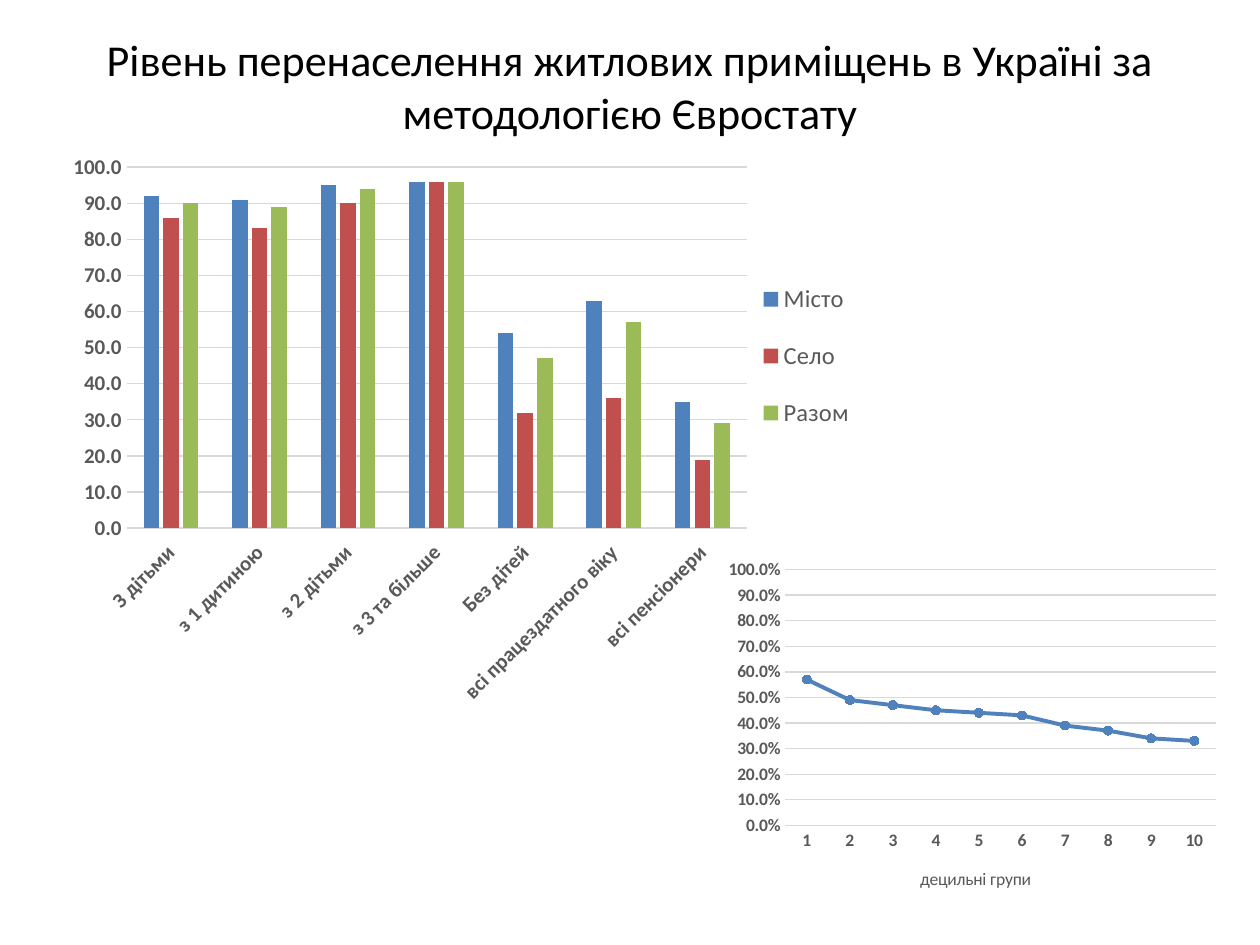
from dataclasses import dataclass
from lxml.etree import SubElement, QName
from pptx import Presentation
from pptx.chart.data import CategoryChartData as Data
from pptx.dml.color import RGBColor as Rgb
from pptx.enum.chart import (
    XL_CHART_TYPE as Kind,
    XL_LEGEND_POSITION as Side,
    XL_MARKER_STYLE as Mark,
    XL_TICK_LABEL_POSITION as Label,
    XL_TICK_MARK as Tick,
)
from pptx.enum.text import MSO_ANCHOR as Anchor, MSO_AUTO_SIZE as Fit, PP_ALIGN as Align
from pptx.util import Inches, Pt


@dataclass(frozen=True)
class Theme:
    face: str = "Calibri"
    ink: str = "000000"
    grey: str = "595959"
    rule: str = "D9D9D9"
    hues: tuple = ("4F81BD", "C0504D", "9BBB59")
    head: float = 25.2
    key: float = 14
    big: float = 12
    small: float = 10
    thin: float = 0.75
    thick: float = 2.25


class Deck:
    """Holds the theme and the current slide, and adds each kind of element."""

    def __init__(self, theme):
        self.theme = theme
        self.prs = Presentation()
        self.prs.slide_width, self.prs.slide_height = Inches(10), Inches(7.5)
        self.slide = self.prs.slides.add_slide(self.prs.slide_layouts[5])

    def box(self, x, y, w, h):
        wide, high = self.prs.slide_width, self.prs.slide_height
        return int(x * wide), int(y * high), int(w * wide), int(h * high)

    def font(self, font, size, color, bold=False):
        font.name, font.size, font.bold = self.theme.face, Pt(size), bold
        font.color.rgb = Rgb.from_string(color)

    def title(self, text, area):
        shape = self.slide.shapes.title
        shape.left, shape.top, shape.width, shape.height = self.box(*area)
        frame = shape.text_frame
        frame.text = text
        frame.word_wrap, frame.auto_size = True, Fit.NONE
        frame.vertical_anchor = Anchor.MIDDLE
        para = frame.paragraphs[0]
        para.alignment = Align.CENTER
        self.font(para.font, self.theme.head, self.theme.ink)

    def place(self, node, spot, after=None, inner=False):
        space = "{%s}" % QName(node).namespace
        for old in node.findall(space + "layout"):
            node.remove(old)
        outer = SubElement(node, space + "layout")
        node.insert(0 if after is None else node.index(node.find(space + after)) + 1, outer)
        frame = SubElement(outer, space + "manualLayout")
        if inner:
            SubElement(frame, space + "layoutTarget", val="inner")
        for name in ("xMode", "yMode"):
            SubElement(frame, space + name, val="edge")
        for name, share in zip("xywh", spot):
            SubElement(frame, space + name, val=str(share))

    def line(self, line, color, width):
        line.color.rgb, line.width = Rgb.from_string(color), Pt(width)

    def chart(self, kind, area, cats, rows, plot, size, top, form):
        data = Data()
        data.categories = cats
        for name, vals in rows.items():
            data.add_series(name, vals)
        chart = self.slide.shapes.add_chart(kind, *self.box(*area), data).chart
        chart.has_title = chart.has_legend = False
        self.font(chart.font, self.theme.small, self.theme.ink)
        self.place(chart.plots[0]._element.getparent(), plot, inner=True)
        for axis in (chart.category_axis, chart.value_axis):
            axis.major_tick_mark = axis.minor_tick_mark = Tick.NONE
            self.font(axis.tick_labels.font, size, self.theme.grey, True)
        self.line(chart.category_axis.format.line, self.theme.rule, self.theme.thin)
        axis = chart.value_axis
        axis.format.line.fill.background()
        axis.minimum_scale, axis.maximum_scale, axis.major_unit = 0, top, top / 10
        axis.tick_labels.number_format = form
        axis.tick_labels.number_format_is_linked = False
        self.line(axis.major_gridlines.format.line, self.theme.rule, self.theme.thin)
        chart.plots[0].vary_by_categories = False
        return chart

    def bars(self, area, cats, rows, plot, spot):
        chart = self.chart(Kind.COLUMN_CLUSTERED, area, cats, rows, plot,
                           self.theme.big, 100, "0.0")
        bars = chart.plots[0]
        bars.gap_width, bars.overlap = 219, -27
        for row, hue in zip(bars.series, self.theme.hues):
            row.format.fill.solid()
            row.format.fill.fore_color.rgb = Rgb.from_string(hue)
        axis = chart.category_axis
        axis.tick_label_position = Label.LOW
        text = axis._element.find("{*}txPr/{*}bodyPr")
        text.set("rot", "-2700000")
        text.set("vert", "horz")
        chart.has_legend = True
        key = chart.legend
        key.position, key.include_in_layout = Side.RIGHT, False
        self.font(key.font, self.theme.key, self.theme.grey)
        self.place(key._element, spot, "legendPos")

    def trend(self, area, cats, rows, plot, label, spot):
        chart = self.chart(Kind.LINE_MARKERS, area, cats, rows, plot,
                           self.theme.small, 1, "###0.0%")
        hue = self.theme.hues[0]
        row = chart.plots[0].series[0]
        row.smooth = False
        self.line(row.format.line, hue, self.theme.thick)
        row.marker.style, row.marker.size = Mark.CIRCLE, 5
        row.marker.format.fill.solid()
        row.marker.format.fill.fore_color.rgb = Rgb.from_string(hue)
        self.line(row.marker.format.line, hue, self.theme.thin)
        title = chart.category_axis.axis_title
        title.text_frame.text = label
        self.font(title.text_frame.paragraphs[0].font, self.theme.small, self.theme.grey)
        self.place(title._element, spot, "tx")


def main():
    deck = Deck(Theme())
    deck.title("Рівень перенаселення житлових приміщень в Україні за методологією Євростату",
               (0.05, 0.04, 0.9, 0.1))
    deck.bars(
        (0.05, 0.153, 0.631, 0.597),
        ("З дітьми", "з 1 дитиною", "з 2 дітьми", "з 3 та більше",
         "Без дітей", "всі працездатного віку", "всі пенсіонери"),
        {"Місто": (92, 91, 95, 96, 54, 63, 35),
         "Село": (86, 83, 90, 96, 32, 36, 19),
         "Разом": (90, 89, 94, 96, 47, 57, 29)},
        (0.08, 0.04, 0.78, 0.64),
        (0.87, 0.2, 0.13, 0.35),
    )
    deck.trend(
        (0.571, 0.584, 0.402, 0.376),
        [str(n) for n in range(1, 11)],
        {"Series 1": (0.57, 0.49, 0.47, 0.45, 0.44, 0.43, 0.39, 0.37, 0.34, 0.33)},
        (0.13, 0.05, 0.85, 0.72),
        "децильні групи",
        (0.39, 0.88),
    )
    deck.prs.save("out.pptx")


if __name__ == "__main__":
    main()
